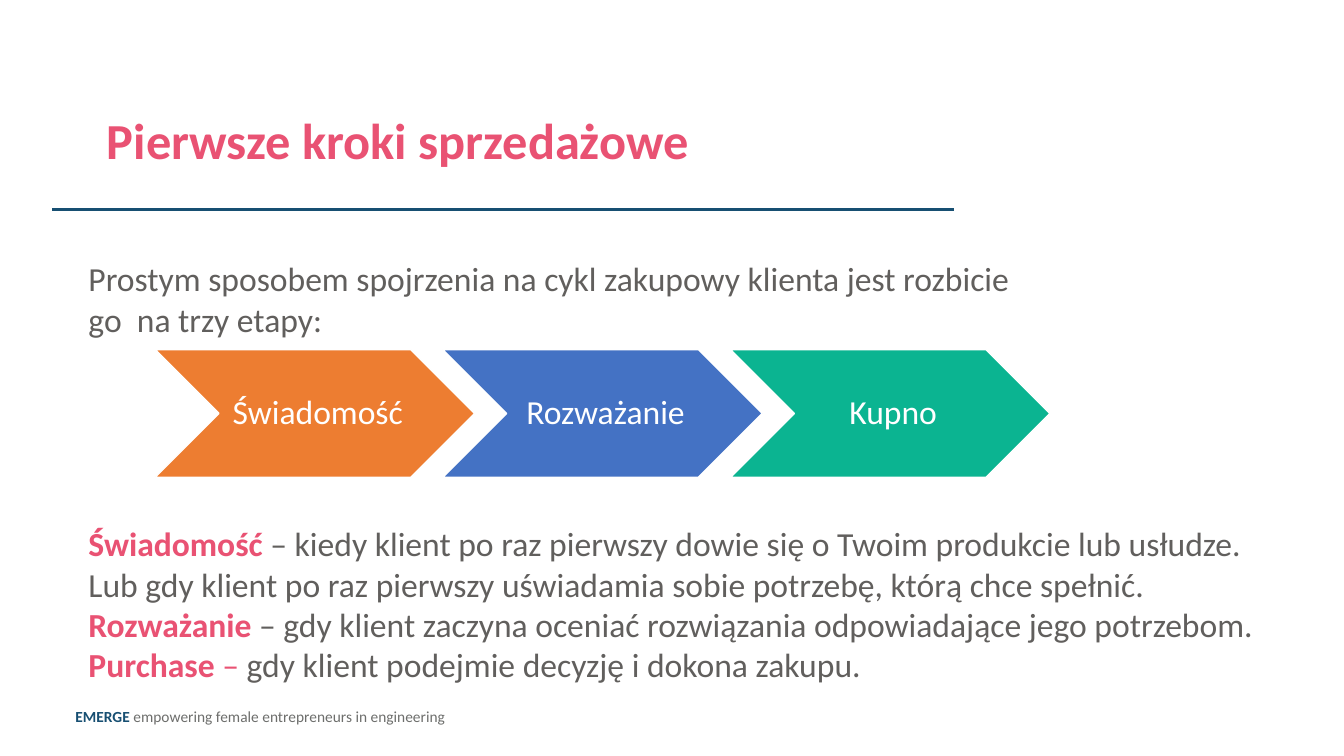
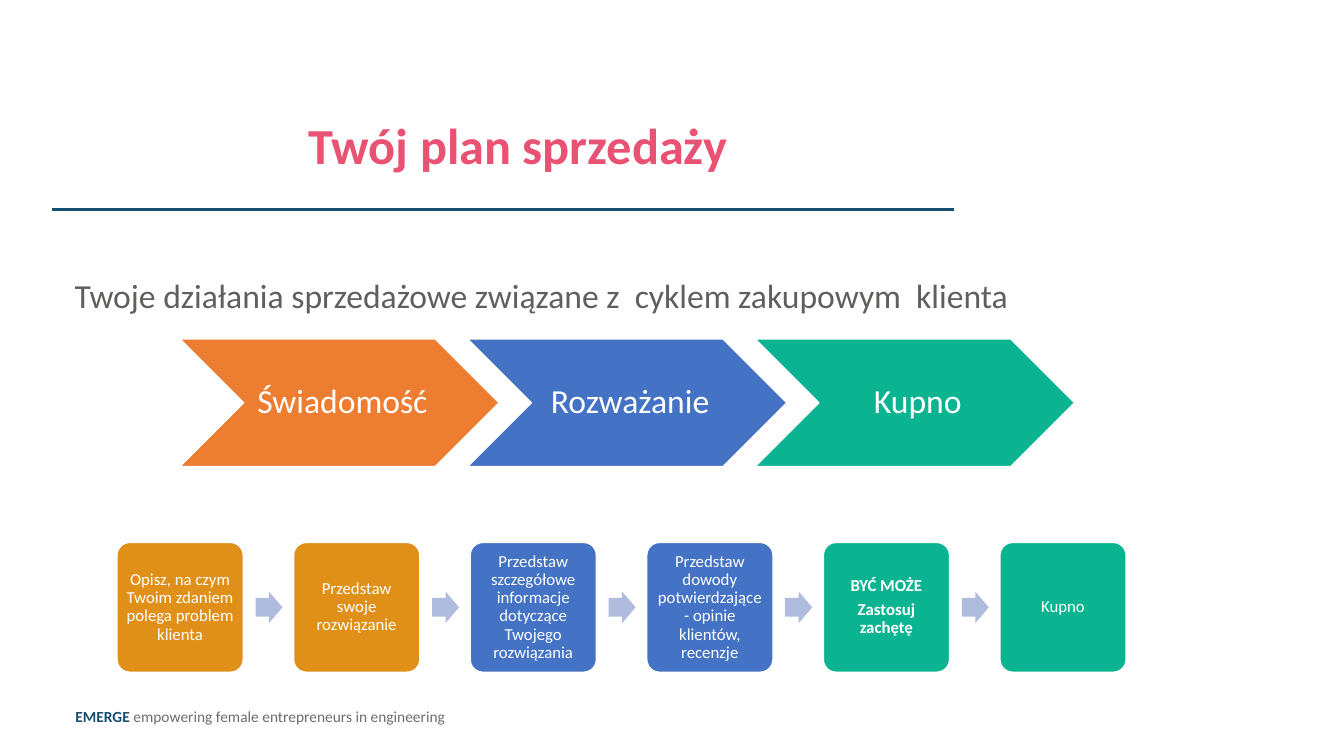
from lxml import etree
from pptx import Presentation
from pptx.dml.color import RGBColor
from pptx.enum import shapes, text
from pptx.oxml import ns
from pptx.util import Cm, Pt

FONT = "Calibri"
PINK = RGBColor(0xE9, 0x52, 0x73)
NAVY = RGBColor(0x17, 0x4F, 0x72)
GREY = RGBColor(0x61, 0x5F, 0x5D)
FOOTER_GREY = RGBColor(0x6D, 0x6E, 0x6C)
WHITE = RGBColor(0xFF, 0xFF, 0xFF)
ORANGE = RGBColor(0xED, 0x7D, 0x31)
AMBER = RGBColor(0xE0, 0x90, 0x18)
BLUE = RGBColor(0x44, 0x72, 0xC4)
GREEN = RGBColor(0x0B, 0xB4, 0x91)
ARROW_BLUE = RGBColor(0xB0, 0xBC, 0xDE)

LEFT, CENTER = text.PP_ALIGN.LEFT, text.PP_ALIGN.CENTER
TOP, MIDDLE = text.MSO_ANCHOR.TOP, text.MSO_ANCHOR.MIDDLE


def write(frame, paragraphs, size, align=LEFT, anchor=TOP, spacing=1.0, gap=0):
    """Fill a frame; each paragraph is a list of (text, colour, bold) runs."""
    frame.word_wrap = True
    frame.vertical_anchor = anchor
    for index, parts in enumerate(paragraphs):
        paragraph = frame.add_paragraph() if index else frame.paragraphs[0]
        paragraph.alignment = align
        paragraph.line_spacing = spacing
        paragraph.space_before = Pt(gap if index else 0)
        for words, colour, bold in parts:
            run = paragraph.add_run()
            run.text = words
            run.font.name = FONT
            run.font.size = Pt(size)
            run.font.bold = bold
            run.font.color.rgb = colour


def add_filled_shape(slide, kind, left, top, width, height, fill, outline=None):
    shape = slide.shapes.add_shape(kind, Cm(left), Cm(top), Cm(width), Cm(height))
    shape.shadow.inherit = False
    shape.fill.solid()
    shape.fill.fore_color.rgb = fill
    if outline is None:
        shape.line.fill.background()
    else:
        shape.line.color.rgb = outline
        shape.line.width = Pt(1)
    return shape


presentation = Presentation()
presentation.slide_width = Cm(33.87)
presentation.slide_height = Cm(19.05)
title_only = presentation.slide_layouts[5]

# Title with its place and alignment, intro with its place, chevron row origin
pages = [
    ("Pierwsze kroki sprzedażowe", 2.44, 2.79, LEFT,
     "Prostym sposobem spojrzenia na cykl zakupowy klienta jest rozbicie go  na trzy etapy:",
     1.98, 6.38, 2.31, 3.91, 8.81),
    ("Twój plan sprzedaży", 2.77, 2.92, CENTER,
     "Twoje działania sprzedażowe związane z  cyklem zakupowym  klienta",
     1.63, 6.81, 1.27, 4.53, 8.54),
]
stages = [("Świadomość", ORANGE), ("Rozważanie", BLUE), ("Kupno", GREEN)]
CHEVRON_WIDTH, CHEVRON_HEIGHT, CHEVRON_STEP = 8.05, 3.22, 7.25

for (title_text, title_left, title_top, title_align, intro_text, intro_left,
     intro_top, intro_height, chevron_left, chevron_top) in pages:
    slide = presentation.slides.add_slide(title_only)

    rule = slide.shapes.add_connector(
        shapes.MSO_CONNECTOR.STRAIGHT, Cm(1.32), Cm(5.28), Cm(24.05), Cm(5.28))
    rule.line.color.rgb = NAVY
    rule.line.width = Pt(2.25)
    etree.SubElement(rule.element.spPr, ns.qn("a:effectLst"))

    footer = slide.shapes.add_textbox(Cm(1.65), Cm(17.7), Cm(31.39), Cm(1.14))
    write(footer.text_frame, [[
        ("EMERGE ", NAVY, True),
        ("empowering female entrepreneurs in engineering", FOOTER_GREY, False),
    ]], 11)

    title = slide.shapes.title
    title.left, title.top = Cm(title_left), Cm(title_top)
    title.width, title.height = Cm(20.57), Cm(1.93)
    write(title.text_frame, [[(title_text, PINK, True)]], 36, title_align, spacing=0.9)

    intro = slide.shapes.add_textbox(
        Cm(intro_left), Cm(intro_top), Cm(24.18), Cm(intro_height))
    write(intro.text_frame, [[(intro_text, GREY, False)]], 24)

    for index, (stage, colour) in enumerate(stages):
        chevron = add_filled_shape(
            slide, shapes.MSO_SHAPE.CHEVRON, chevron_left + index * CHEVRON_STEP,
            chevron_top, CHEVRON_WIDTH, CHEVRON_HEIGHT, colour, WHITE)
        frame = chevron.text_frame
        frame.margin_left = Cm(0.25)
        frame.margin_right = frame.margin_top = frame.margin_bottom = Cm(0.1)
        write(frame, [[(stage, WHITE, False)]], 24, CENTER, MIDDLE, 0.9)

steps_slide, plan_slide = presentation.slides

# Stage definitions
definitions = steps_slide.shapes.add_textbox(Cm(1.98), Cm(13.06), Cm(29.9), Cm(4.37))
write(definitions.text_frame, [
    [("Świadomość ", PINK, True),
     ("– kiedy klient po raz pierwszy dowie się o Twoim produkcie lub usłudze. "
      "Lub gdy klient po raz pierwszy uświadamia sobie potrzebę, którą chce spełnić.",
      GREY, False)],
    [("Rozważanie ", PINK, True),
     ("– gdy klient zaczyna oceniać rozwiązania odpowiadające jego potrzebom.",
      GREY, False)],
    [("Purchase", PINK, True), (" – ", PINK, False),
     ("gdy klient podejmie decyzję i dokona zakupu.", GREY, False)],
], 24)

# Sales actions joined by arrows
actions = [
    (["Opisz, na czym Twoim zdaniem polega problem klienta"], AMBER, False),
    (["Przedstaw swoje rozwiązanie"], AMBER, False),
    (["Przedstaw szczegółowe informacje dotyczące Twojego rozwiązania"], BLUE, False),
    (["Przedstaw dowody potwierdzające - opinie klientów, recenzje"], BLUE, False),
    (["BYĆ MOŻE", "Zastosuj zachętę"], GREEN, True),
    (["Kupno"], GREEN, False),
]
BOX_LEFT, BOX_TOP, BOX_WIDTH, BOX_HEIGHT, BOX_STEP = 2.95, 13.67, 3.18, 3.27, 4.45
ARROW_OFFSET, ARROW_WIDTH, ARROW_HEIGHT = 3.49, 0.68, 0.79

for index, (lines, colour, bold) in enumerate(actions):
    left = BOX_LEFT + index * BOX_STEP
    box = add_filled_shape(slide=plan_slide, kind=shapes.MSO_SHAPE.ROUNDED_RECTANGLE,
                           left=left, top=BOX_TOP, width=BOX_WIDTH,
                           height=BOX_HEIGHT, fill=colour, outline=WHITE)
    box.adjustments[0] = 0.1
    frame = box.text_frame
    frame.margin_left = frame.margin_right = Cm(0.12)
    frame.margin_top = frame.margin_bottom = Cm(0.12)
    write(frame, [[(line, WHITE, bold)] for line in lines], 12, CENTER, MIDDLE, 0.9, 4)
    if index < len(actions) - 1:
        arrow = add_filled_shape(
            plan_slide, shapes.MSO_SHAPE.RIGHT_ARROW, left + ARROW_OFFSET,
            BOX_TOP + (BOX_HEIGHT - ARROW_HEIGHT) / 2, ARROW_WIDTH, ARROW_HEIGHT,
            ARROW_BLUE)
        arrow.adjustments[0] = 0.6
        arrow.adjustments[1] = 0.5

presentation.save("out.pptx")
